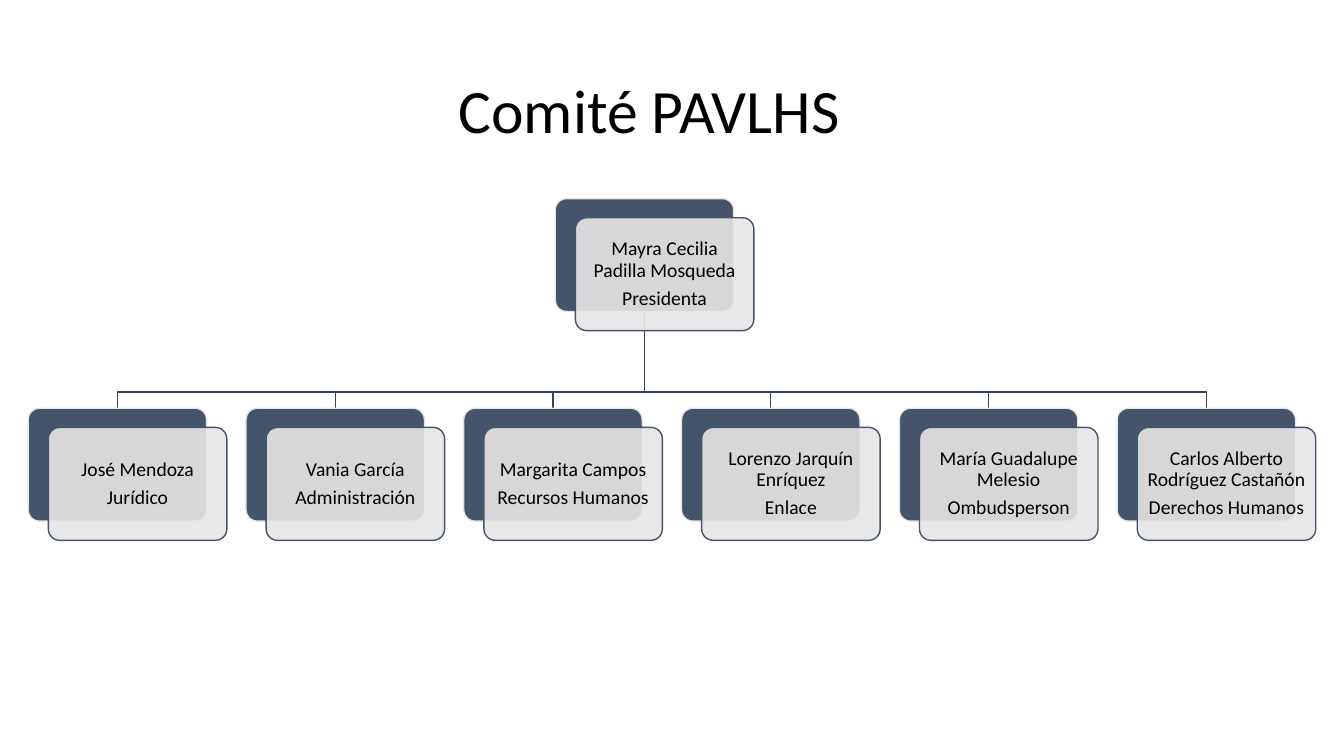
from dataclasses import dataclass

from lxml.etree import SubElement
from pptx import Presentation
from pptx.dml.color import RGBColor
from pptx.enum.shapes import MSO_SHAPE as Shape
from pptx.enum.text import MSO_ANCHOR as Anchor, PP_ALIGN as Align
from pptx.oxml.ns import qn
from pptx.shapes.autoshape import Shape as AutoShape
from pptx.slide import Slide
from pptx.text.text import TextFrame
from pptx.util import Inches, Pt

SLATE = RGBColor(0x44, 0x54, 0x6A)
DARK_SLATE = RGBColor(0x36, 0x43, 0x55)
PALE_GREY = RGBColor(0xE7, 0xE6, 0xE6)
BLACK = RGBColor(0x00, 0x00, 0x00)
FONT = "Calibri"

# Grid of the chart, in inches
GRID_LEFT, GRID_TOP = 0.28, 1.97
COL_PITCH, ROW_PITCH = 2.16, 2.08
CARD_W, CARD_H = 1.77, 1.12
SHIFT_X, SHIFT_Y = 0.2, 0.19
BUS_RISE = 0.16
CARD_INSET = 0.06


@dataclass(frozen=True)
class Member:
    name: str
    role: str
    col: float
    row: int = 1

    @property
    def left(self) -> float:
        return GRID_LEFT + self.col * COL_PITCH

    @property
    def top(self) -> float:
        return GRID_TOP + self.row * ROW_PITCH

    @property
    def center(self) -> float:
        return self.left + CARD_W / 2


PRESIDENT = Member("Mayra Cecilia Padilla Mosqueda", "Presidenta", 2.42, 0)
STAFF = [
    Member(name, role, col)
    for col, (name, role) in enumerate([
        ("José Mendoza", "Jurídico"),
        ("Vania García", "Administración"),
        ("Margarita Campos", "Recursos Humanos"),
        ("Lorenzo Jarquín Enríquez", "Enlace"),
        ("María Guadalupe Melesio", "Ombudsperson"),
        ("Carlos Alberto Rodríguez Castañón", "Derechos Humanos"),
    ])
]


def write_lines(tf: TextFrame, lines: list[str], size: int, after: int = 0) -> None:
    tf.word_wrap = True
    tf.vertical_anchor = Anchor.MIDDLE
    for i, line in enumerate(lines):
        p = tf.paragraphs[0] if i == 0 else tf.add_paragraph()
        p.alignment = Align.CENTER
        p.line_spacing = 0.9
        p.space_before = Pt(0)
        p.space_after = Pt(after)
        r = p.add_run()
        r.text = line
        r.font.name = FONT
        r.font.size = Pt(size)
        r.font.color.rgb = BLACK


def add_link(s: Slide, boss: Member, member: Member) -> None:
    """Draw the elbow line from the boss's card down to the member's card."""
    bus = member.top - BUS_RISE
    builder = s.shapes.build_freeform(
        Inches(boss.center), Inches(boss.top + CARD_H)
    )
    corners = [(boss.center, bus), (member.center, bus), (member.center, member.top)]
    builder.add_line_segments([(Inches(x), Inches(y)) for x, y in corners], close=False)
    sp = builder.convert_to_shape()
    sp.shadow.inherit = False
    sp.fill.background()
    sp.line.color.rgb = DARK_SLATE
    sp.line.width = Pt(1)


def add_panel(s: Slide, left: float, top: float, fill: RGBColor, line: RGBColor) -> AutoShape:
    sp = s.shapes.add_shape(
        Shape.ROUNDED_RECTANGLE, Inches(left), Inches(top), Inches(CARD_W), Inches(CARD_H)
    )
    sp.adjustments[0] = 0.1
    sp.shadow.inherit = False
    sp.fill.solid()
    sp.fill.fore_color.rgb = fill
    sp.line.color.rgb = line
    sp.line.width = Pt(1)
    return sp


def add_card(s: Slide, member: Member) -> None:
    """Draw a dark back panel and a translucent front panel holding the text."""
    add_panel(s, member.left, member.top, SLATE, PALE_GREY)
    front = add_panel(s, member.left + SHIFT_X, member.top + SHIFT_Y, PALE_GREY, SLATE)
    color = front.element.spPr.find(qn("a:solidFill"))[0]
    SubElement(color, qn("a:alpha"), val="90000")
    tf = front.text_frame
    tf.margin_left = tf.margin_right = Inches(CARD_INSET)
    tf.margin_top = tf.margin_bottom = Inches(CARD_INSET)
    write_lines(tf, [member.name, member.role], 14, after=5)


def main() -> None:
    prs = Presentation()
    prs.slide_width, prs.slide_height = Inches(13.33), Inches(7.5)
    s = prs.slides.add_slide(prs.slide_layouts[5])

    for member in reversed(STAFF):
        add_link(s, PRESIDENT, member)
    for member in [PRESIDENT, *STAFF]:
        add_card(s, member)

    title = s.shapes.title
    title.left, title.top = Inches(0.69), Inches(0.4)
    title.width, title.height = Inches(11.5), Inches(1.45)
    write_lines(title.text_frame, ["Comité PAVLHS"], 44)

    prs.save("out.pptx")


if __name__ == "__main__":
    main()
